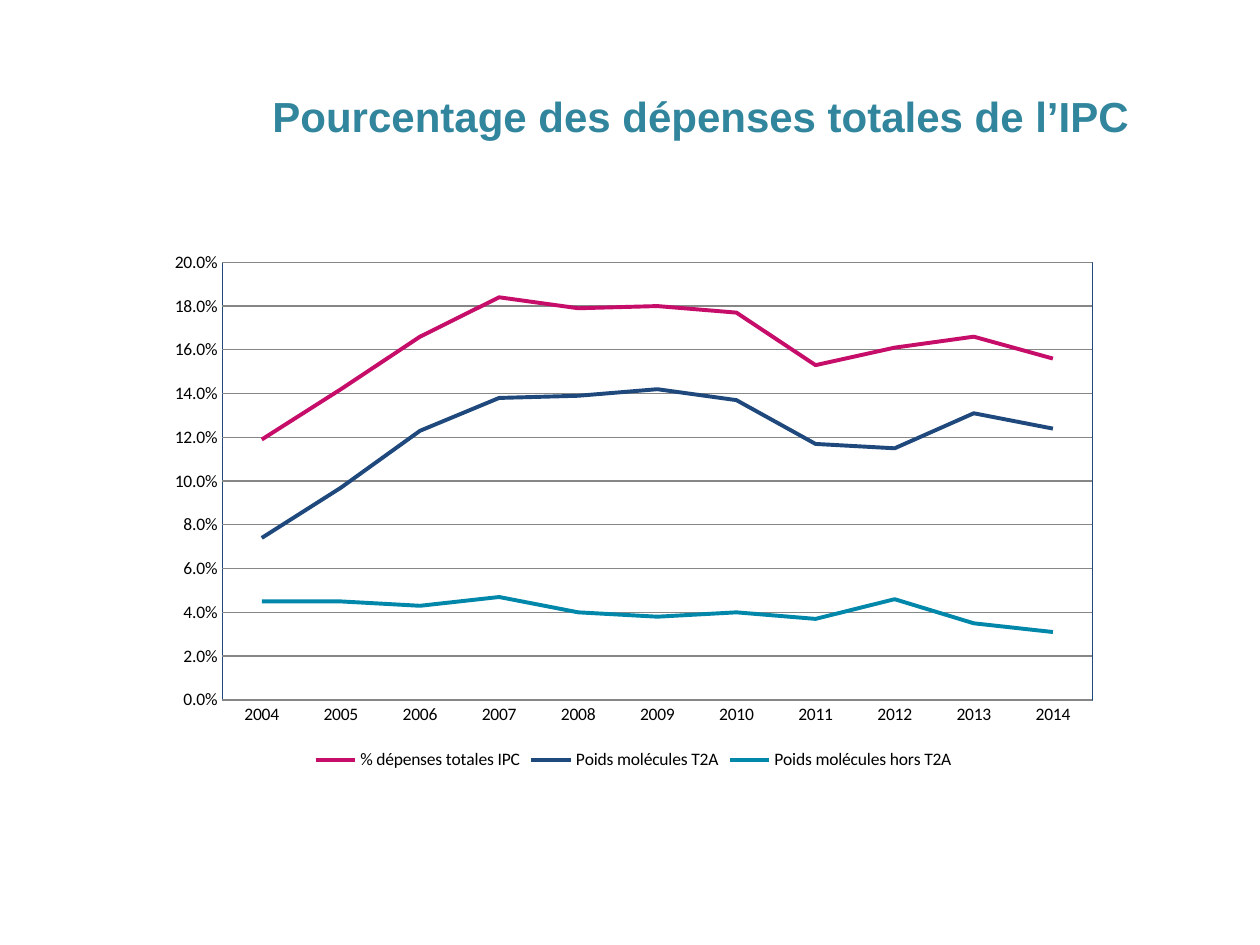
"""Build the slide on the share of total IPC spending, 2004 to 2014."""
from lxml import etree
from pptx import Presentation
from pptx.chart.data import CategoryChartData
from pptx.dml.color import RGBColor
from pptx.enum.chart import XL_CHART_TYPE, XL_LEGEND_POSITION, XL_TICK_MARK
from pptx.enum.text import MSO_ANCHOR, PP_ALIGN
from pptx.oxml import parse_xml
from pptx.oxml.ns import nsdecls, qn
from pptx.util import Cm, Pt

LINE = XL_CHART_TYPE.LINE
BOTTOM = XL_LEGEND_POSITION.BOTTOM
NONE = XL_TICK_MARK.NONE
TOP = MSO_ANCHOR.TOP
RIGHT = PP_ALIGN.RIGHT

COLORS = {"title": "31859C", "text": "000000", "grid": "868686",
          "frame": "1F497D", "total": "C50D69", "t2a": "1F497D",
          "other": "0187AA"}
SERIES = [
    ("% dépenses totales IPC", "total", 2,
     [0.119, 0.142, 0.166, 0.184, 0.179, 0.18, 0.177, 0.153, 0.161, 0.166, 0.156]),
    ("Poids molécules T2A", "t2a", 0,
     [0.074, 0.097, 0.123, 0.138, 0.139, 0.142, 0.137, 0.117, 0.115, 0.131, 0.124]),
    ("Poids molécules hors T2A", "other", 1,
     [0.045, 0.045, 0.043, 0.047, 0.04, 0.038, 0.04, 0.037, 0.046, 0.035, 0.031]),
]
PLOT = {"x": 0.07, "y": 0.04, "w": 0.91, "h": 0.82}


def color(name):
    return RGBColor.from_string(COLORS[name])


def stroke(line, name, width):
    line.color.rgb = color(name)
    line.width = Pt(width)


deck = Presentation()
deck.slide_width, deck.slide_height = Cm(25.4), Cm(19.05)
slide = deck.slides.add_slide(deck.slide_layouts[5])

title = slide.shapes.title
title.left, title.top = Cm(0.79), Cm(1.7)
title.width, title.height = Cm(22.45), Cm(2.18)
frame = title.text_frame
frame.text = "Pourcentage des dépenses totales de l’IPC"
frame.word_wrap = True
frame.vertical_anchor = TOP
frame.margin_left, frame.margin_right = Cm(0.5), Cm(0.48)
frame.margin_top = frame.margin_bottom = Cm(0.13)
head = frame.paragraphs[0]
head.alignment = RIGHT
head.font.name = "Arial"
head.font.size = Pt(24)
head.font.bold = True
head.font.color.rgb = color("title")

data = CategoryChartData(number_format="0.0%")
data.categories = [str(year) for year in range(2004, 2015)]
for name, _, _, values in SERIES:
    data.add_series(name, values)
chart = slide.shapes.add_chart(
    LINE, Cm(3.13), Cm(4.86), Cm(19.28), Cm(10.76), data).chart
chart.has_title = False
chart.font.name = "Calibri"
chart.font.size = Pt(10)
chart.font.color.rgb = color("text")
chart.has_legend = True
chart.legend.position = BOTTOM
chart.legend.include_in_layout = False

plot = chart.plots[0]
plot.vary_by_categories = False
for series, (_, key, rank, _) in zip(list(plot.series), SERIES):
    series.smooth = False
    stroke(series.format.line, key, 2.25)
    series._element.find(qn("c:order")).set("val", str(rank))

years, shares = chart.category_axis, chart.value_axis
for axis in (years, shares):
    axis.major_tick_mark = axis.minor_tick_mark = NONE
stroke(years.format.line, "grid", 0.75)
shares.format.line.fill.background()
shares.minimum_scale, shares.maximum_scale, shares.major_unit = 0, 0.2, 0.02
shares.tick_labels.number_format = "0.0%"
shares.tick_labels.number_format_is_linked = False
shares.has_major_gridlines = True
stroke(shares.major_gridlines.format.line, "grid", 0.75)

area = plot._element.getparent()
for old in area.findall(qn("c:layout")):
    area.remove(old)
layout = etree.Element(qn("c:layout"))
manual = etree.SubElement(layout, qn("c:manualLayout"))
rules = {"layoutTarget": "inner", "xMode": "edge", "yMode": "edge", **PLOT}
for tag, value in rules.items():
    etree.SubElement(manual, qn(f"c:{tag}")).set("val", str(value))
area.insert(0, layout)
area.append(parse_xml(
    f'<c:spPr {nsdecls("c", "a")}><a:noFill/><a:ln w="9525"><a:solidFill>'
    f'<a:srgbClr val="{COLORS["frame"]}"/></a:solidFill></a:ln></c:spPr>'))

deck.save("out.pptx")
